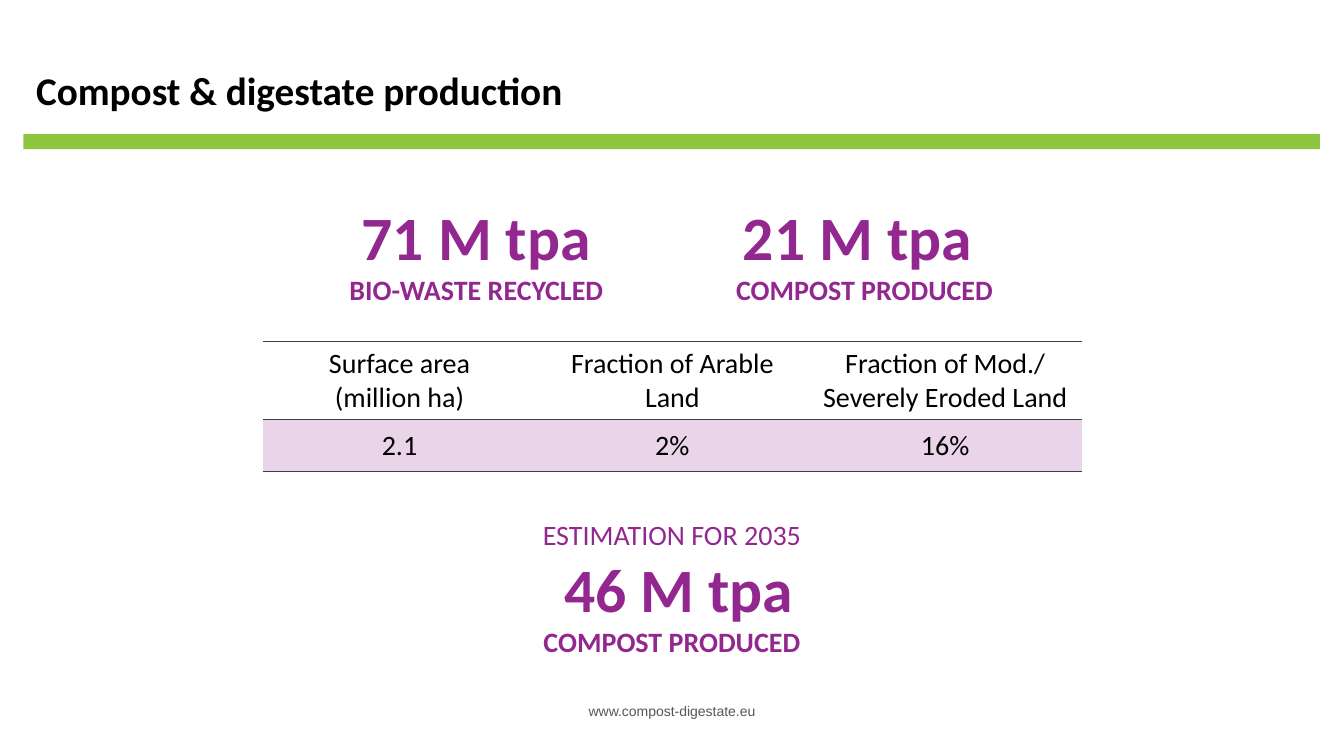
"""Build the compost and digestate production slide on a percent grid."""
import pptx
import pptx.dml.color
import pptx.enum.shapes
import pptx.enum.text
import pptx.oxml
import pptx.util
import lxml.etree

RGB = pptx.dml.color.RGBColor
ALIGN = pptx.enum.text.PP_ALIGN
ANCHOR = pptx.enum.text.MSO_ANCHOR
GREEN = RGB(0x8D, 0xC6, 0x3F)
PURPLE = RGB(0x92, 0x27, 0x8F)
PALE = RGB(0xE9, 0xD4, 0xE9)
BLACK = RGB(0, 0, 0)
GREY = RGB(0x57, 0x57, 0x59)
RULE = RGB(0x40, 0x40, 0x40)
WIDE = pptx.util.Inches(13.33)
HIGH = pptx.util.Inches(7.5)
PLAIN = "{2D5ABB26-0587-4C30-8999-92F81FD0307C}"
BODY, BIG = 20, 44


def place(left, top, width, height):
    """Turn percentages of the slide into lengths."""
    return (int(WIDE * left / 100), int(HIGH * top / 100),
            int(WIDE * width / 100), int(HIGH * height / 100))


def write(frame, lines, color, align=ALIGN.CENTER, face="Calibri"):
    """Write one paragraph for each (text, size, bold) line."""
    frame.word_wrap = True
    for i, (text, size, bold) in enumerate(lines):
        para = frame.add_paragraph() if i else frame.paragraphs[0]
        para.alignment = align
        run = para.add_run()
        run.text = text
        run.font.name = face
        run.font.size = pptx.util.Pt(size)
        run.font.bold = bold
        run.font.color.rgb = color


def label(slide, area, lines, color, **style):
    """Add a text box and return its frame."""
    frame = slide.shapes.add_textbox(*place(*area)).text_frame
    write(frame, lines, color, **style)
    return frame


def band(slide, area):
    """Add the green bar under the title."""
    bar = slide.shapes.add_shape(
        pptx.enum.shapes.MSO_SHAPE.RECTANGLE, *place(*area))
    bar.shadow.inherit = False
    bar.fill.solid()
    bar.fill.fore_color.rgb = GREEN
    bar.line.fill.background()


def edge(cell, side):
    """Draw a thin rule on one side of a cell."""
    line = lxml.etree.SubElement(
        cell._tc.get_or_add_tcPr(), pptx.oxml.ns.qn("a:" + side), w="9525")
    fill = lxml.etree.SubElement(line, pptx.oxml.ns.qn("a:solidFill"))
    lxml.etree.SubElement(
        fill, pptx.oxml.ns.qn("a:srgbClr"), val=str(RULE))


def grid(slide, area, rows, tall):
    """Add the land table with ruled rows and a tinted last row."""
    table = slide.shapes.add_table(
        len(rows), len(rows[0]), *place(*area)).table
    table.horz_banding = False
    table.first_row = False
    table._tbl.tblPr.find(pptx.oxml.ns.qn("a:tableStyleId")).text = PLAIN
    for r, row in enumerate(rows):
        table.rows[r].height = int(HIGH * tall[r] / 100)
        for c, lines in enumerate(row):
            cell = table.cell(r, c)
            write(cell.text_frame, [(t, BODY, False) for t in lines], BLACK)
            edge(cell, "lnT")
            edge(cell, "lnB")
            if r:
                cell.vertical_anchor = ANCHOR.MIDDLE
                cell.fill.solid()
                cell.fill.fore_color.rgb = PALE
            else:
                cell.fill.background()


def main():
    """Lay out the slide and save it."""
    deck = pptx.Presentation()
    deck.slide_width, deck.slide_height = WIDE, HIGH
    slide = deck.slides.add_slide(deck.slide_layouts[6])

    band(slide, (1.73, 17.73, 96.47, 2))
    label(slide, (41.03, 92.27, 17.94, 3.6),
          [("www.compost-digestate.eu", 10, False)], GREY, face="Arial")
    title = label(slide, (1.95, 4.67, 91.15, 15.33),
                  [("Compost & digestate production", 28, True)],
                  BLACK, align=ALIGN.LEFT)
    title.vertical_anchor = ANCHOR.MIDDLE
    title.paragraphs[0].line_spacing = 0.9

    facts = [("71 M tpa", "BIO-WASTE RECYCLED"),
             ("21 M tpa ", "COMPOST PRODUCED")]
    for i, (value, name) in enumerate(facts):
        label(slide, (24.46 + 28.88 * i, 25.6, 21.98, 15.73),
              [(value, BIG, True), (name, BODY, True)], PURPLE)

    rows = [[["Surface area", "(million ha)"], ["Fraction of Arable Land"],
             ["Fraction of Mod./ Severely Eroded Land"]],
            [["2.1"], ["2%"], ["16%"]]]
    grid(slide, (19.58, 45.2, 60.9, 17.2), rows, (10.27, 6.93))

    label(slide, (25.35, 67.73, 49.3, 20.13),
          [("ESTIMATION FOR 2035", BODY, False), (" 46 M tpa", BIG, True),
           ("COMPOST PRODUCED", BODY, True)], PURPLE)
    deck.save("out.pptx")


if __name__ == "__main__":
    main()
